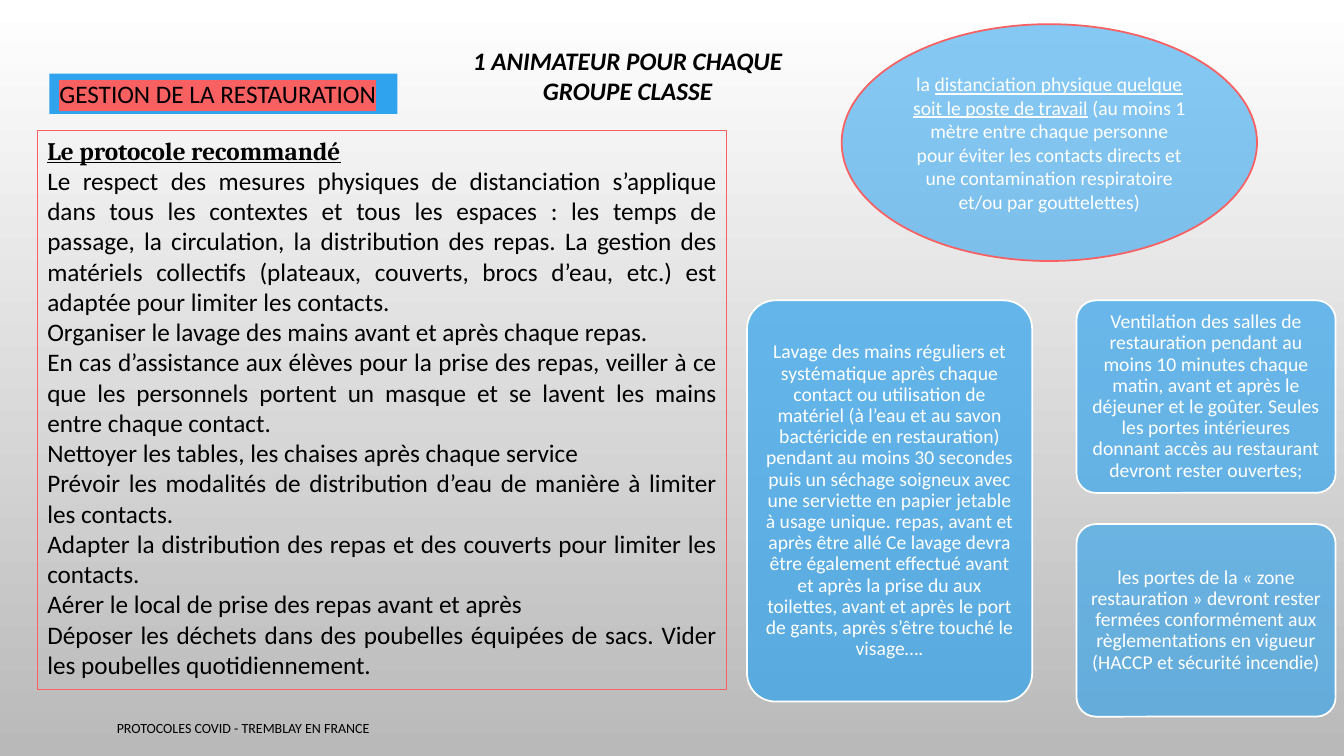
"""Build the slide on the school-meal health protocol."""
import lxml.etree
import pptx
import pptx.dml.color
import pptx.enum.shapes
import pptx.enum.text
import pptx.oxml.ns
import pptx.util

COLOURS = {"blue": "2FA3EE", "coral": "F86062", "white": "FFFFFF",
           "grey": "B9B9B9", "black": "000000"}
SHAPES = pptx.enum.shapes.MSO_SHAPE
ALIGN = pptx.enum.text.PP_ALIGN
ANCHOR = pptx.enum.text.MSO_ANCHOR
AUTO_SIZE = pptx.enum.text.MSO_AUTO_SIZE
CARD_MARGIN = pptx.util.Inches(0.06)
CARD_FRAME = {"vertical_anchor": ANCHOR.MIDDLE, "margin_left": CARD_MARGIN,
              "margin_right": CARD_MARGIN, "margin_top": CARD_MARGIN,
              "margin_bottom": CARD_MARGIN}
GROWING = {"auto_size": AUTO_SIZE.SHAPE_TO_FIT_TEXT}
MIDDLE = {"vertical_anchor": ANCHOR.MIDDLE}
CENTRED = {"alignment": ALIGN.CENTER}
CARD_PARAGRAPH = {"alignment": ALIGN.CENTER, "line_spacing": 0.9}

PROTOCOL_TITLE = "Le protocole recommandé"
PROTOCOL_RULES = [
    "Le respect des mesures physiques de distanciation s’applique dans tous les contextes et tous "
    "les espaces : les temps de passage, la circulation, la distribution des repas. La gestion des "
    "matériels collectifs (plateaux, couverts, brocs d’eau, etc.) est adaptée pour limiter les contacts.",
    "Organiser le lavage des mains avant et après chaque repas.",
    "En cas d’assistance aux élèves pour la prise des repas, veiller à ce que les personnels portent "
    "un masque et se lavent les mains entre chaque contact.",
    "Nettoyer les tables, les chaises après chaque service",
    "Prévoir les modalités de distribution d’eau de manière à limiter les contacts.",
    "Adapter la distribution des repas et des couverts pour limiter les contacts.",
    "Aérer le local de prise des repas avant et après",
    "Déposer les déchets dans des poubelles équipées de sacs. Vider les poubelles quotidiennement.",
]
CARDS = [
    ((55.58, 39.73, 21.22, 53.07), 70,
     "Lavage des mains réguliers et systématique après chaque contact ou utilisation de matériel "
     "(à l’eau et au savon bactéricide en restauration) pendant au moins 30 secondes puis un séchage "
     "soigneux avec une serviette en papier jetable à usage unique. repas, avant et après être allé "
     "Ce lavage devra être également effectué avant et après la prise du aux toilettes, avant et "
     "après le port de gants, après s’être touché le visage…."),
    ((80.1, 39.73, 19.28, 25.47), 67,
     "Ventilation des salles de restauration pendant au moins 10 minutes chaque matin, avant et après "
     "le déjeuner et le goûter. Seules les portes intérieures donnant accès au restaurant devront "
     "rester ouvertes;"),
    ((80.1, 69.33, 19.28, 25.47), 62,
     "les portes de la « zone restauration » devront rester fermées conformément aux règlementations "
     "en vigueur (HACCP et sécurité incendie)"),
]


class SlideBuilder:
    """Hold the style and the current slide; places are percentages of the slide's size."""

    def __init__(self, presentation):
        self.width = presentation.slide_width
        self.height = presentation.slide_height
        self.slide = presentation.slides.add_slide(presentation.slide_layouts[6])

    def colour(self, name):
        """Return the named colour."""
        return pptx.dml.color.RGBColor.from_string(COLOURS[name])

    def place(self, area):
        """Turn percentages into slide lengths."""
        sizes = (self.width, self.height) * 2
        return [round(size * share / 100) for size, share in zip(sizes, area)]

    def apply(self, target, formats):
        """Set each format value on the target."""
        for name, value in formats.items():
            setattr(target, name, value)

    def background(self, *names):
        """Fill the background from top to bottom."""
        fill = self.slide.background.fill
        fill.gradient()
        fill.gradient_angle = 270
        for stop, name in zip(fill.gradient_stops, names):
            stop.color.rgb = self.colour(name)

    def shape(self, kind, area, fill=None, opacity=100, line=None, line_width=1.25):
        """Add a preset shape."""
        shape = self.slide.shapes.add_shape(kind, *self.place(area))
        shape.shadow.inherit = False
        if fill:
            shape.fill.solid()
            shape.fill.fore_color.rgb = self.colour(fill)
            if opacity < 100:
                tint = shape.fill._xPr.find(".//" + pptx.oxml.ns.qn("a:srgbClr"))
                alpha = lxml.etree.SubElement(tint, pptx.oxml.ns.qn("a:alpha"))
                alpha.set("val", str(opacity * 1000))
        else:
            shape.fill.background()
        if line:
            shape.line.color.rgb = self.colour(line)
            shape.line.width = pptx.util.Pt(line_width)
        else:
            shape.line.fill.background()
        return shape

    def text_box(self, area):
        """Add an empty text box."""
        return self.slide.shapes.add_textbox(*self.place(area))

    def add_text(self, shape, paragraphs, size, colour="black", frame_format=None, paragraph_format=None):
        """Add paragraphs, each a list of text and font format pairs."""
        frame = shape.text_frame
        self.apply(frame, {"word_wrap": True, **(frame_format or {})})
        for index, pieces in enumerate(paragraphs):
            paragraph = frame.add_paragraph() if index else frame.paragraphs[0]
            self.apply(paragraph, {"alignment": ALIGN.LEFT, **(paragraph_format or {})})
            for text, font_format in pieces:
                run = paragraph.add_run()
                run.text = text
                self.apply(run.font, {"size": pptx.util.Pt(size), "name": "Calibri", **font_format})
                run.font.color.rgb = self.colour(colour)

    def highlight(self, shape, name):
        """Mark the first run of a shape with a highlight colour."""
        properties = shape.text_frame.paragraphs[0].runs[0]._r.get_or_add_rPr()
        mark = lxml.etree.Element(pptx.oxml.ns.qn("a:highlight"))
        lxml.etree.SubElement(mark, pptx.oxml.ns.qn("a:srgbClr")).set("val", COLOURS[name])
        properties.find(pptx.oxml.ns.qn("a:solidFill")).addnext(mark)

    def card(self, area, opacity, text):
        """Add a rounded card with its advice."""
        card = self.shape(SHAPES.ROUNDED_RECTANGLE, area, "blue", opacity, "white")
        card.adjustments[0] = 0.1
        self.add_text(card, [[(text, {})]], 14, "white", CARD_FRAME, CARD_PARAGRAPH)


def main():
    """Build and save the presentation."""
    presentation = pptx.Presentation()
    presentation.slide_width = pptx.util.Inches(13.33)
    presentation.slide_height = pptx.util.Inches(7.5)
    builder = SlideBuilder(presentation)
    builder.background("white", "grey")

    banner = builder.shape(SHAPES.RECTANGLE, (3.68, 9.73, 25.88, 5.33), "blue")
    builder.add_text(banner, [[("GESTION DE LA RESTAURATION", {})]], 18,
                     frame_format={**GROWING, "word_wrap": False})
    builder.highlight(banner, "coral")

    protocol = builder.shape(SHAPES.RECTANGLE, (2.78, 17.2, 51.3, 74), line="coral", line_width=0.75)
    heading = (PROTOCOL_TITLE, {"name": "Cambria", "bold": True, "underline": True})
    builder.add_text(protocol, [[heading]] + [[(rule, {})] for rule in PROTOCOL_RULES], 18,
                     frame_format={**GROWING, "vertical_anchor": ANCHOR.TOP},
                     paragraph_format={"alignment": ALIGN.JUSTIFY})

    for area, opacity, text in CARDS:
        builder.card(area, opacity, text)

    distancing = builder.shape(SHAPES.OVAL, (62.63, 3.2, 30.9, 31.33), "blue", 58, "coral")
    builder.add_text(distancing, [[
        ("la ", {}),
        ("distanciation physique quelque soit le poste de travail", {"underline": True}),
        (" (au moins 1 mètre entre chaque personne pour éviter les contacts directs et une "
         "contamination respiratoire et/ou par gouttelettes)", {}),
    ]], 14, "white", MIDDLE, CENTRED)

    footer = builder.text_box((7.95, 93.6, 54.75, 5.33))
    builder.add_text(footer, [[("PROTOCOLES COVID - TREMBLAY EN FRANCE", {})]], 10, frame_format=MIDDLE)

    staffing = builder.text_box((32.93, 5.33, 27.53, 9.47))
    builder.add_text(staffing, [[("1 ANIMATEUR POUR CHAQUE GROUPE CLASSE", {"bold": True, "italic": True})]],
                     18, frame_format=GROWING, paragraph_format=CENTRED)

    presentation.save("out.pptx")


if __name__ == "__main__":
    main()
